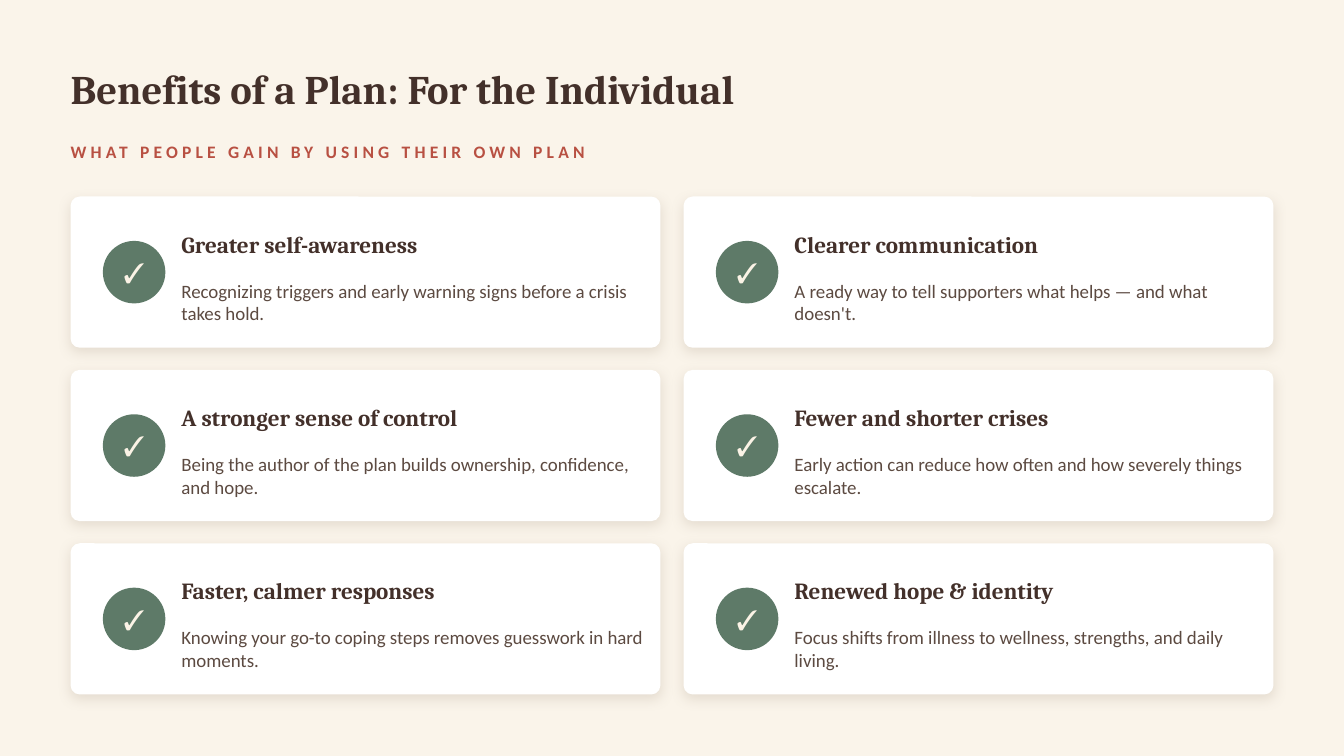
"""Build the slide on what individuals gain from their own PLAN."""
from dataclasses import dataclass

from lxml.etree import SubElement
from pptx import Presentation
from pptx.dml.color import RGBColor
from pptx.enum.shapes import MSO_SHAPE
from pptx.enum.text import MSO_ANCHOR, PP_ALIGN
from pptx.oxml.ns import qn
from pptx.util import Inches, Pt

TITLE = "Benefits of a Plan: For the Individual"
SUBTITLE = "WHAT PEOPLE GAIN BY USING THEIR OWN PLAN"
BENEFIT_COLUMNS = [
    [
        ("Greater self-awareness",
         "Recognizing triggers and early warning signs before a crisis takes hold."),
        ("A stronger sense of control",
         "Being the author of the plan builds ownership, confidence, and hope."),
        ("Faster, calmer responses",
         "Knowing your go-to coping steps removes guesswork in hard moments."),
    ],
    [
        ("Clearer communication",
         "A ready way to tell supporters what helps — and what doesn't."),
        ("Fewer and shorter crises",
         "Early action can reduce how often and how severely things escalate."),
        ("Renewed hope & identity",
         "Focus shifts from illness to wellness, strengths, and daily living."),
    ],
]


@dataclass(frozen=True)
class Theme:
    """Colours, fonts and type sizes."""
    background: str = "FAF4EA"
    card: str = "FFFFFF"
    shadow: str = "9A8873"
    badge: str = "5E7A68"
    check: str = "FBF3E6"
    heading: str = "43302A"
    accent: str = "B85042"
    body: str = "5C4A41"
    serif: str = "Cambria"
    sans: str = "Calibri"
    title_size: float = 29
    subtitle_size: float = 12.5
    check_size: float = 20
    heading_size: float = 16.5
    body_size: float = 13.5


THEME = Theme()
MARGIN, CARDS_TOP = 0.7, 1.95
CONTENT_WIDTH = 11.9
CARD_WIDTH, CARD_HEIGHT = 5.85, 1.5
COLUMN_GAP, ROW_GAP = 0.23, 0.22
BADGE_SIZE = 0.62


def add_text(slide, text, box, *, font, size, color, bold=False,
             align=PP_ALIGN.LEFT, spacing=None):
    """Add a vertically centred text box without insets."""
    frame = slide.shapes.add_textbox(*map(Inches, box)).text_frame
    frame.word_wrap = True
    frame.vertical_anchor = MSO_ANCHOR.MIDDLE
    frame.margin_left = frame.margin_right = frame.margin_top = frame.margin_bottom = 0
    paragraph = frame.paragraphs[0]
    paragraph.alignment = align
    run = paragraph.add_run()
    run.text = text
    run.font.name, run.font.size, run.font.bold = font, Pt(size), bold
    run.font.color.rgb = RGBColor.from_string(color)
    if spacing:
        run.font._element.set("spc", str(int(spacing * 100)))


def add_filled_shape(slide, kind, box, color):
    """Add a preset shape with a flat fill and no outline."""
    shape = slide.shapes.add_shape(kind, *map(Inches, box))
    shape.shadow.inherit = False
    shape.fill.solid()
    shape.fill.fore_color.rgb = RGBColor.from_string(color)
    shape.line.fill.background()
    return shape


def add_soft_shadow(shape):
    """Give a shape a soft shadow that falls straight down."""
    effects = shape._element.spPr.find(qn("a:effectLst"))
    shadow = SubElement(effects, qn("a:outerShdw"), blurRad=str(Pt(9)), dist=str(Pt(3)),
                        dir="5400000", algn="bl", rotWithShape="0")
    color = SubElement(shadow, qn("a:srgbClr"), val=THEME.shadow)
    SubElement(color, qn("a:alpha"), val="22000")


def add_benefit(slide, left, top, heading, description):
    """Add one card with a check badge, a heading and a description."""
    card = add_filled_shape(slide, MSO_SHAPE.ROUNDED_RECTANGLE,
                            (left, top, CARD_WIDTH, CARD_HEIGHT), THEME.card)
    card.adjustments[0] = 0.06
    add_soft_shadow(card)
    badge_box = (left + 0.32, top + (CARD_HEIGHT - BADGE_SIZE) / 2, BADGE_SIZE, BADGE_SIZE)
    add_filled_shape(slide, MSO_SHAPE.OVAL, badge_box, THEME.badge)
    add_text(slide, "✓", badge_box, font=THEME.serif, size=THEME.check_size,
             color=THEME.check, bold=True, align=PP_ALIGN.CENTER)
    add_text(slide, heading, (left + 1.1, top + 0.22, 4.6, 0.5), font=THEME.serif,
             size=THEME.heading_size, color=THEME.heading, bold=True)
    add_text(slide, description, (left + 1.1, top + 0.72, 4.6, 0.65), font=THEME.sans,
             size=THEME.body_size, color=THEME.body)


def main():
    """Build and save the presentation."""
    presentation = Presentation()
    presentation.slide_width, presentation.slide_height = Inches(13.33), Inches(7.5)
    slide = presentation.slides.add_slide(presentation.slide_layouts[6])
    slide.background.fill.solid()
    slide.background.fill.fore_color.rgb = RGBColor.from_string(THEME.background)

    add_text(slide, TITLE, (MARGIN, 0.45, CONTENT_WIDTH, 0.85), font=THEME.serif,
             size=THEME.title_size, color=THEME.heading, bold=True)
    add_text(slide, SUBTITLE, (MARGIN, 1.35, CONTENT_WIDTH, 0.3), font=THEME.sans,
             size=THEME.subtitle_size, color=THEME.accent, bold=True, spacing=3)
    for column, benefits in enumerate(BENEFIT_COLUMNS):
        for row, (heading, description) in enumerate(benefits):
            add_benefit(slide, MARGIN + column * (CARD_WIDTH + COLUMN_GAP),
                        CARDS_TOP + row * (CARD_HEIGHT + ROW_GAP), heading, description)
    presentation.save("out.pptx")


if __name__ == "__main__":
    main()
